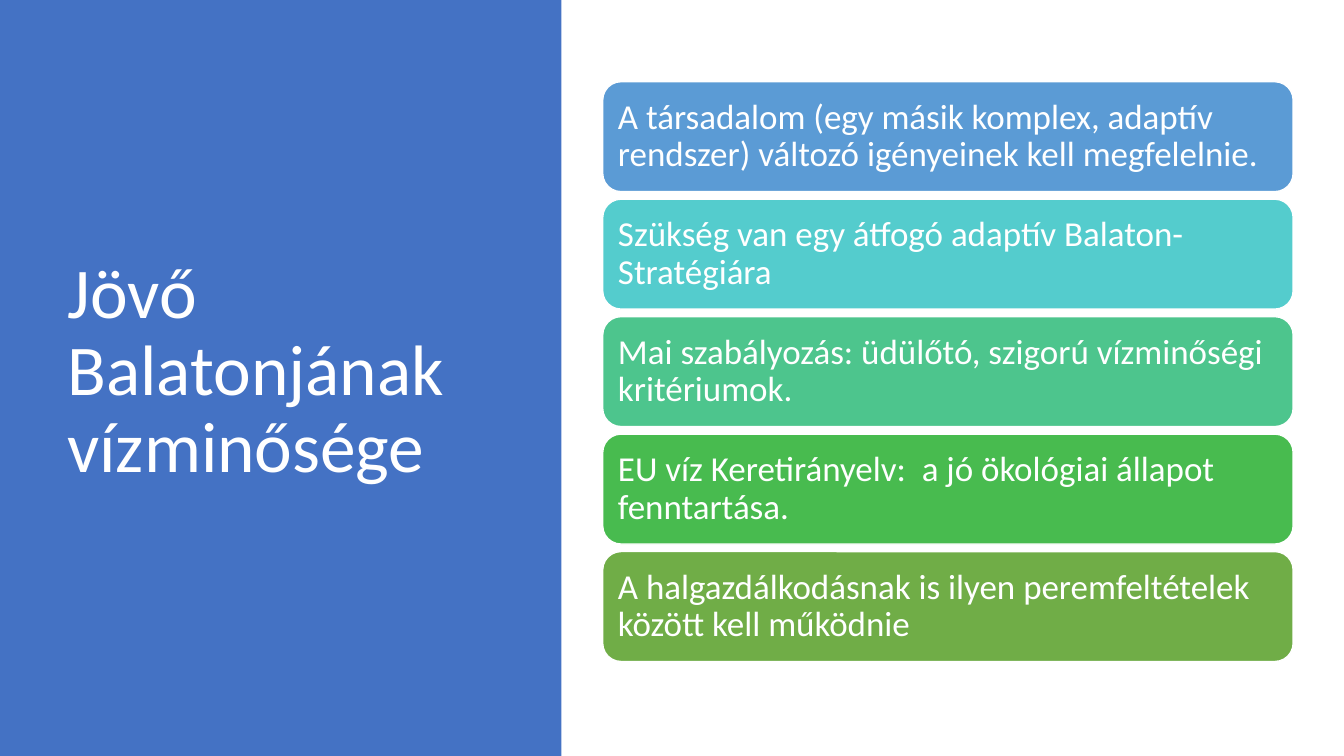
from pptx import Presentation
from pptx import util as u
from pptx.dml.color import RGBColor
from pptx.enum import shapes, text

WHITE = "FFFFFF"
FONT = "Calibri"


def paint(target, color):
    """Give a fill a solid hex colour."""
    target.solid()
    target.fore_color.rgb = RGBColor.from_string(color)


def write(frame, words, size):
    """Set one white, left-aligned, vertically centred paragraph."""
    frame.word_wrap = True
    frame.vertical_anchor = text.MSO_ANCHOR.MIDDLE
    paragraph = frame.paragraphs[0]
    paragraph.alignment = text.PP_ALIGN.LEFT
    paragraph.line_spacing = 0.9
    run = paragraph.add_run()
    run.text = words
    run.font.name = FONT
    run.font.size = u.Pt(size)
    paint(run.font.fill, WHITE)


prs = Presentation()
prs.slide_width, prs.slide_height = u.Cm(33.87), u.Cm(19.05)
slide = prs.slides.add_slide(prs.slide_layouts[6])

panel = slide.shapes.add_shape(
    shapes.MSO_SHAPE.RECTANGLE, 0, 0, u.Cm(14.15), prs.slide_height)
panel.shadow.inherit = False
paint(panel.fill, "4472C4")
panel.line.fill.background()

title = slide.shapes.add_textbox(u.Cm(1.45), u.Cm(1.73), u.Cm(10.57), u.Cm(15.29))
write(title.text_frame, "Jövő Balatonjának vízminősége", 51)

statements = [
    ("A társadalom (egy másik komplex, adaptív rendszer) változó igényeinek kell megfelelnie.", "5B9BD5"),
    ("Szükség van egy átfogó adaptív Balaton-Stratégiára", "54CCCD"),
    ("Mai szabályozás: üdülőtó, szigorú vízminőségi kritériumok.", "4DC58D"),
    ("EU víz Keretirányelv:  a jó ökológiai állapot fenntartása.", "48BB4F"),
    ("A halgazdálkodásnak is ilyen peremfeltételek között kell működnie", "70AD47"),
]
first_top, pitch = 2.06, 2.96
for row, (statement, color) in enumerate(statements):
    card = slide.shapes.add_shape(
        shapes.MSO_SHAPE.ROUNDED_RECTANGLE,
        u.Cm(15.19), u.Cm(first_top + row * pitch), u.Cm(17.4), u.Cm(2.77))
    card.shadow.inherit = False
    paint(card.fill, color)
    paint(card.line.fill, WHITE)
    card.line.width = u.Pt(1)
    frame = card.text_frame
    frame.margin_left = frame.margin_right = u.Cm(0.25)
    frame.margin_top = frame.margin_bottom = u.Cm(0.25)
    write(frame, statement, 25)

prs.save("out.pptx")
